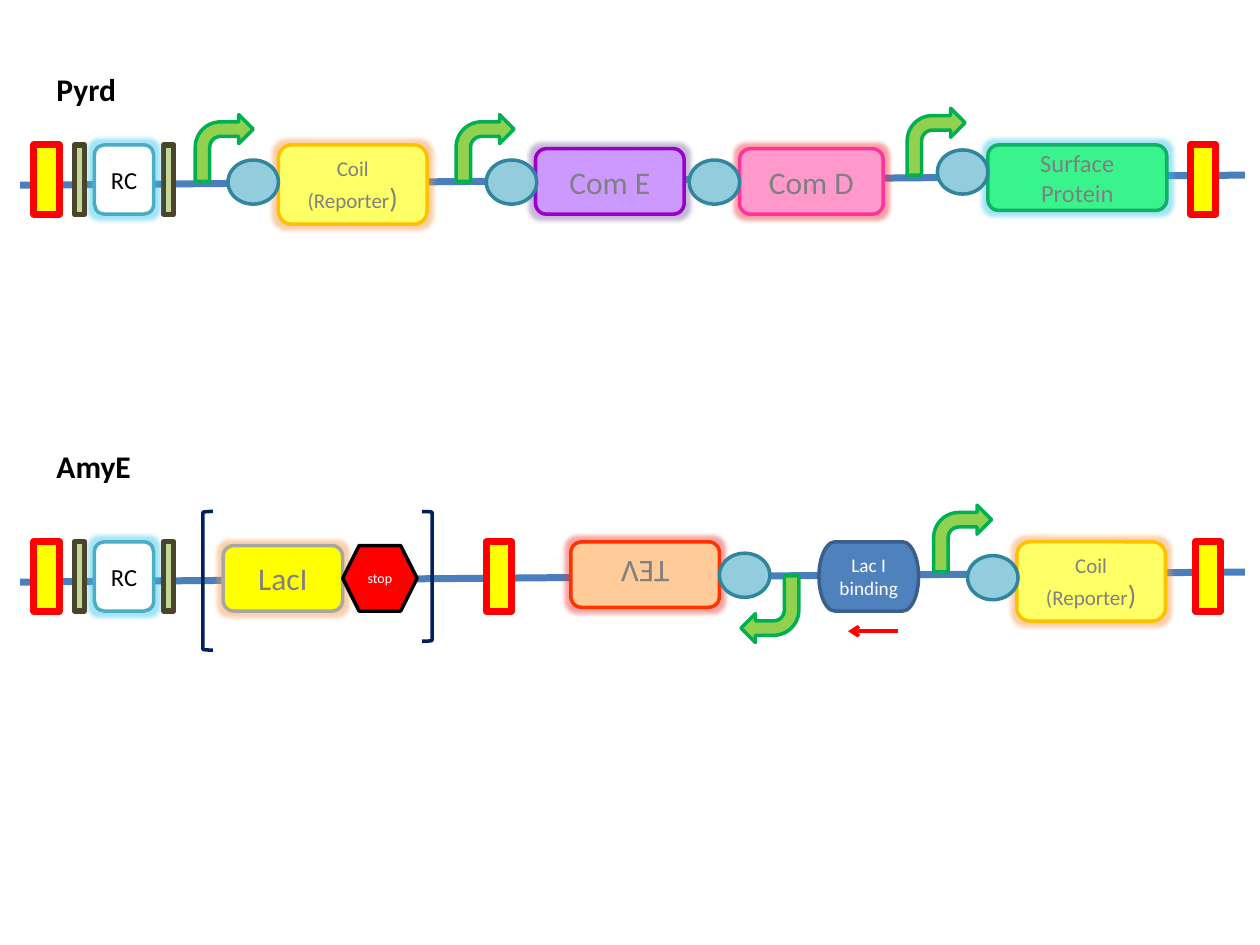
from lxml import etree
from pptx import Presentation
from pptx.dml.color import RGBColor
from pptx.enum import shapes, text
from pptx.oxml import ns
from pptx.util import Inches, Pt

KIND = shapes.MSO_SHAPE
ROW_1, ROW_2 = 1.15, 4.3  # tops of the two construct rows


def color(hex_code):
    return RGBColor.from_string(hex_code)


def sub(parent, tag, **attributes):
    return etree.SubElement(parent, ns.qn(tag), attributes)


def add_part(parent, kind, box, fill, line, width=2, rotation=0):
    part = parent.shapes.add_shape(kind, *map(Inches, box))
    part.shadow.inherit = False
    part.rotation = rotation
    if fill:
        part.fill.solid()
        part.fill.fore_color.rgb = color(fill)
    else:
        part.fill.background()
    part.line.color.rgb = color(line)
    part.line.width = Pt(width)
    return part


def add_glow(part, hex_code):
    effects = part._element.spPr.find(ns.qn("a:effectLst"))
    glow = sub(effects, "a:glow", rad=str(Pt(5)))
    sub(sub(glow, "a:srgbClr", val=hex_code), "a:alpha", val="45000")


def write(part, lines, size, hex_code):
    frame = part.text_frame
    frame.word_wrap = True
    for i, line in enumerate(lines):
        paragraph = frame.paragraphs[0] if i == 0 else frame.add_paragraph()
        paragraph.text = line
        paragraph.alignment = text.PP_ALIGN.CENTER
        paragraph.font.name = "Calibri"
        paragraph.font.size = Pt(size)
        paragraph.font.color.rgb = color(hex_code)


def add_gene(parent, label, box, fill, line, glow, size=18, hex_code="808080", rotation=0):
    gene = add_part(parent, KIND.ROUNDED_RECTANGLE, box, fill, line, rotation=rotation)
    add_glow(gene, glow)
    write(gene, [label], size, hex_code)
    return gene


def add_coil(parent, left, top):
    coil = add_gene(parent, "Coil (Reporter", (left, top, 1.18, 0.63),
                    "FFFF66", "FFC000", "F79646", size=12)
    bracket = coil.text_frame.paragraphs[0].add_run()
    bracket.text = ")"
    bracket.font.size = Pt(16)


def add_binding_site(parent, left, top, rotation=0):
    add_part(parent, KIND.OVAL, (left, top, 0.4, 0.35), "93CDDD", "31859C", rotation=rotation)


def add_promoter(parent, left, top, rotation=0):
    add_part(parent, KIND.BENT_ARROW, (left, top, 0.46, 0.53), "92D050", "00B050",
             rotation=rotation)


def add_end_marker(parent, left, top):
    add_part(parent, KIND.RECTANGLE, (left, top, 0.2, 0.55), "FFFF00", "FF0000", 4)


def add_flank(parent, left, top):
    add_part(parent, KIND.RECTANGLE, (left, top, 0.08, 0.55), "C3D69B", "4A452A", 3)


def add_cassette(parent, top):
    add_gene(parent, "RC", (0.75, top, 0.47, 0.55), "FFFFFF", "4BACC6", "33C4EC",
             size=14, hex_code="000000")
    add_end_marker(parent, 0.27, top)
    add_flank(parent, 0.59, top)


def add_line(parent, start, end, hex_code, width):
    line = parent.shapes.add_connector(
        shapes.MSO_CONNECTOR.STRAIGHT, *map(Inches, start + end))
    line.line.color.rgb = color(hex_code)
    line.line.width = Pt(width)
    sub(line._element.spPr, "a:effectLst")
    return line


def add_strand(parent, top):
    add_line(parent, (0.16, top + 0.32), (9.88, top + 0.24), "4B7EBC", 4)


def add_title(slide, label, top):
    title = slide.shapes.add_textbox(*map(Inches, (0.35, top, 0.94, 0.4)))
    write(title, [label], 18, "000000")
    title.text_frame.paragraphs[0].alignment = text.PP_ALIGN.LEFT
    title.text_frame.paragraphs[0].font.bold = True


def build_pyrd(slide):
    construct = slide.shapes.add_group_shape()
    add_strand(construct, ROW_1)
    add_promoter(construct, 3.62, 0.91)
    add_gene(construct, "Com E", (4.25, 1.18, 1.18, 0.52), "CC99FF", "9900CC", "8064A2")
    add_binding_site(construct, 3.86, 1.27)
    add_gene(construct, "Com D", (5.87, 1.18, 1.14, 0.52), "FF99CC", "FF3399", "EE3030")
    add_binding_site(construct, 5.47, 1.27)
    add_gene(construct, "Surface Protein", (7.84, 1.15, 1.42, 0.52),
             "39F38D", "0FB168", "33C4EC", size=14)
    add_flank(construct, 1.3, ROW_1)
    add_promoter(construct, 1.55, 0.91)
    add_end_marker(construct, 9.45, ROW_1)
    add_promoter(construct, 7.2, 0.86)
    add_binding_site(construct, 7.44, 1.19)
    add_coil(construct, 2.21, ROW_1)
    add_binding_site(construct, 1.81, 1.27)
    add_title(slide, "Pyrd", 0.51)
    add_cassette(slide, ROW_1)


def build_amye(slide):
    add_strand(slide, ROW_2)

    # Bracketed LacI with its stop
    add_gene(slide, "LacI", (1.77, 4.33, 0.95, 0.52), "FFFF00", "A6A6A6", "F79646")
    stop = add_part(slide, KIND.HEXAGON, (2.72, 4.33, 0.59, 0.52), "FF0000", "000000")
    write(stop, ["stop"], 8, "FFFFFF")
    add_part(slide, KIND.LEFT_BRACKET, (1.61, 4.06, 0.08, 1.1), None, "002060")
    add_part(slide, KIND.RIGHT_BRACKET, (3.35, 4.06, 0.08, 1.03), None, "002060")

    # Reporter
    reporter = slide.shapes.add_group_shape()
    add_promoter(reporter, 7.41, 4.01)
    add_coil(reporter, 8.07, ROW_2)
    add_binding_site(reporter, 7.68, 4.41)

    # Reversed TEV
    reverse = slide.shapes.add_group_shape()
    add_promoter(reverse, 5.88, 4.57, 180)
    add_gene(reverse, "TEV", (4.53, ROW_2, 1.18, 0.52), "FFCC99", "FF3300", "EE3030",
             rotation=180)
    add_binding_site(reverse, 5.71, 4.39, 180)

    # Lac I binding region and its direction
    binding = add_part(slide, KIND.FLOWCHART_TERMINATOR, (6.5, ROW_2, 0.79, 0.55),
                       "4F81BD", "3A5F8C")
    write(binding, ["Lac I", "binding"], 11, "FFFFFF")
    direction = add_line(slide, (7.13, 5.01), (6.73, 5.01), "FF0000", 2)
    sub(direction.line._get_or_add_ln(), "a:tailEnd", type="arrow")

    add_title(slide, "AmyE", 3.5)
    add_end_marker(slide, 9.49, ROW_2)
    add_cassette(slide, ROW_2)
    add_flank(slide, 1.3, ROW_2)
    add_end_marker(slide, 3.86, ROW_2)


def main():
    deck = Presentation()
    deck.slide_width, deck.slide_height = Inches(10), Inches(7.5)
    slide = deck.slides.add_slide(deck.slide_layouts[6])
    build_pyrd(slide)
    build_amye(slide)
    deck.save("out.pptx")


if __name__ == "__main__":
    main()
